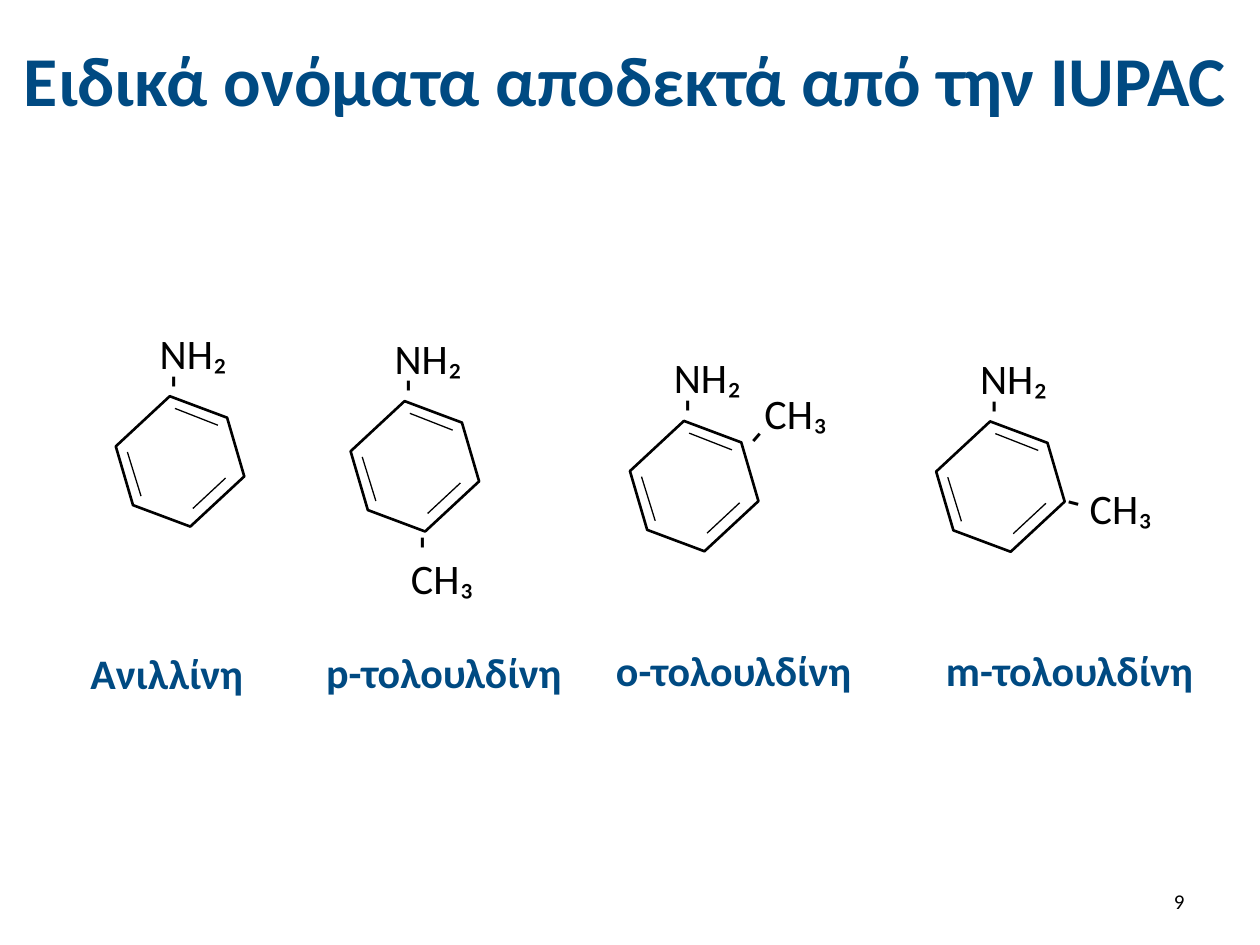
from pptx import Presentation
from pptx.dml.color import RGBColor
from pptx.enum.shapes import MSO_CONNECTOR as Connector, MSO_SHAPE as Shape
from pptx.enum.text import MSO_ANCHOR as Anchor, PP_ALIGN as Align
from pptx.oxml.ns import qn
from pptx.util import Pt
from lxml.etree import SubElement

BLACK, NAVY = "000000", "004A82"
RING_SIZE = (73.4, 62.6)
# Inner strokes of the double bonds, relative to the ring's box
DOUBLE_BONDS = [(6.6, 25.9, 14.4, 51.1), (33.8, 1, 58.3, 10.6), (44, 58.2, 62.7, 40.8)]
# Substituent: formula, its offset, bond offset, bond rotation
AMINE = ("NH₂", (18, -49), (20.2, -31.7), 270)
PARA = ("CH₃", (27.4, 77), (28.1, 57.6), 270)
ORTHO = ("CH₃", (69.8, -28.8), (59.8, -15.8), 310.9)
META = ("CH₃", (80.6, 25.2), (68.4, 20.2), 14.4)
# Ring corner, substituents, name, name box
MOLECULES = [
    ((66.2, 232.4), [AMINE], "Ανιλλίνη", (44.6, 366.5, 102.2, 36)),
    ((200.4, 235.2), [AMINE, PARA], "p-τολουλδίνη", (179.3, 365.8, 149.8, 36)),
    ((360, 246.5), [AMINE, ORTHO], "o-τολουλδίνη", (344.9, 365, 149.8, 36)),
    ((535, 246.8), [AMINE, META], "m-τολουλδίνη", (533.5, 365, 156.2, 36)),
]


def color(hex_code):
    return RGBColor.from_string(hex_code)


def add_text(shapes, text, box, size=24, fill=BLACK, bold=False,
             align=Align.LEFT, anchor=Anchor.TOP, wrap=True, rotation=0):
    label = shapes.add_textbox(*map(Pt, box))
    label.rotation = rotation
    frame = label.text_frame
    frame.word_wrap = wrap
    frame.vertical_anchor = anchor
    paragraph = frame.paragraphs[0]
    paragraph.alignment = align
    run = paragraph.add_run()
    run.text = text
    run.font.name = "Calibri"
    run.font.size = Pt(size)
    run.font.bold = bold
    run.font.color.rgb = color(fill)


def add_ring(shapes, x, y):
    ring = shapes.add_shape(Shape.HEXAGON, *map(Pt, (x, y, *RING_SIZE)))
    ring.rotation = 317.1
    ring.shadow.inherit = False
    ring.fill.background()
    ring.line.color.rgb = color(BLACK)
    ring.line.width = Pt(1.5)
    for x1, y1, x2, y2 in DOUBLE_BONDS:
        bond = shapes.add_connector(
            Connector.STRAIGHT, *map(Pt, (x + x1, y + y1, x + x2, y + y2)))
        bond.line.color.rgb = color(BLACK)
        bond.line.width = Pt(0.75)
        SubElement(bond._element.spPr, qn("a:effectLst"))


def add_molecule(slide, corner, substituents, name, name_box):
    x, y = corner
    molecule = slide.shapes.add_group_shape().shapes
    add_ring(molecule, x, y)
    for formula, (dx, dy), (bond_dx, bond_dy), angle in substituents:
        add_text(molecule, "-", (x + bond_dx, y + bond_dy, 20.2, 36), rotation=angle)
        add_text(molecule, formula, (x + dx, y + dy, 62.6, 36))
    add_text(slide.shapes, name, name_box, fill=NAVY, bold=True, wrap=False)


def main():
    prs = Presentation()
    prs.slide_width, prs.slide_height = Pt(720), Pt(540)
    slide = prs.slides.add_slide(prs.slide_layouts[6])

    # Title
    add_text(slide.shapes, "Ειδικά ονόματα αποδεκτά από την IUPAC",
             (2.9, 9.4, 708.5, 71.3), size=40, fill=NAVY, bold=True,
             align=Align.CENTER, anchor=Anchor.MIDDLE)

    # Aniline and its methyl derivatives
    for molecule in MOLECULES:
        add_molecule(slide, *molecule)

    # Page number
    add_text(slide.shapes, "9", (516.2, 500.4, 167.8, 28.8), size=12,
             align=Align.RIGHT, anchor=Anchor.MIDDLE)

    prs.save("out.pptx")


if __name__ == "__main__":
    main()
